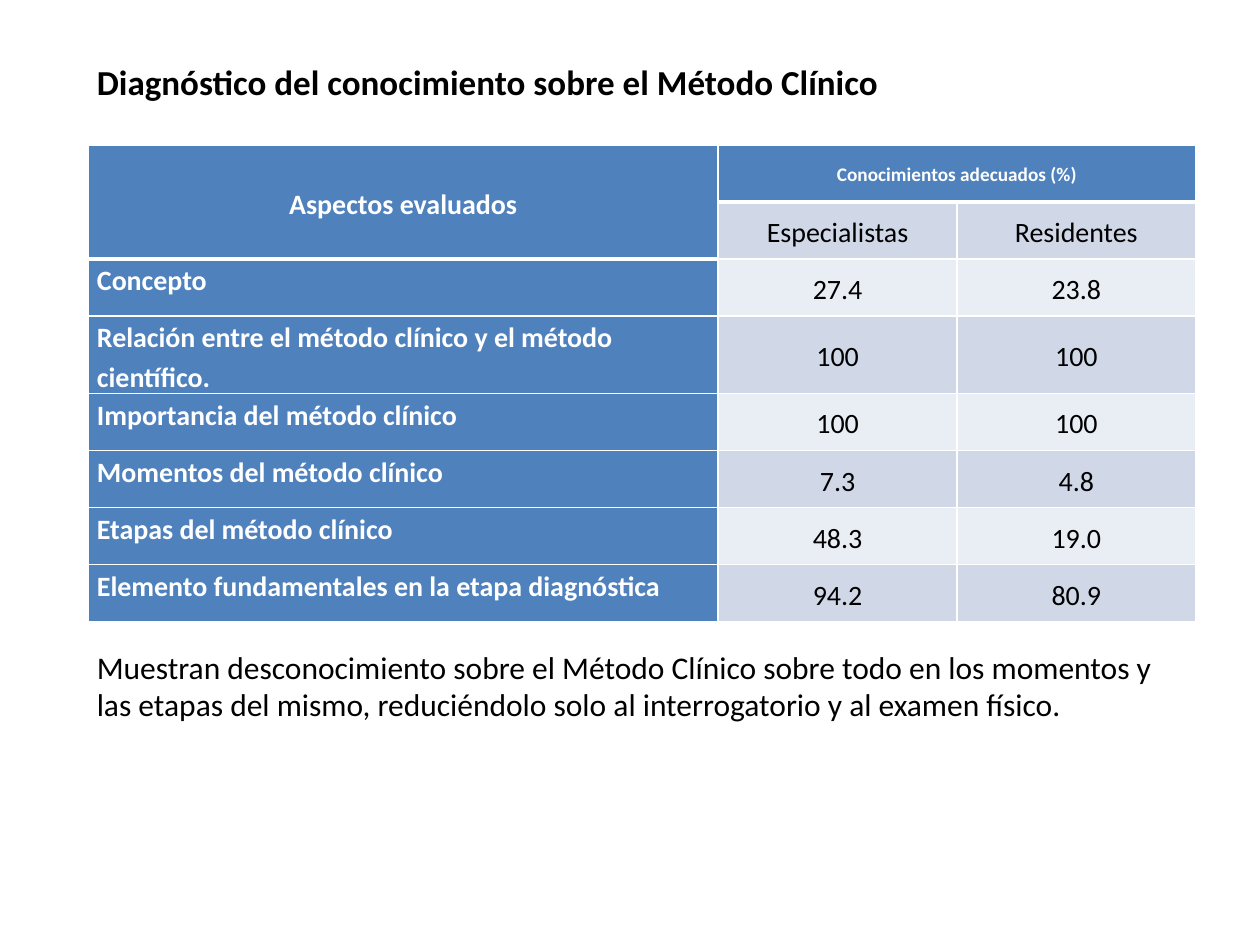
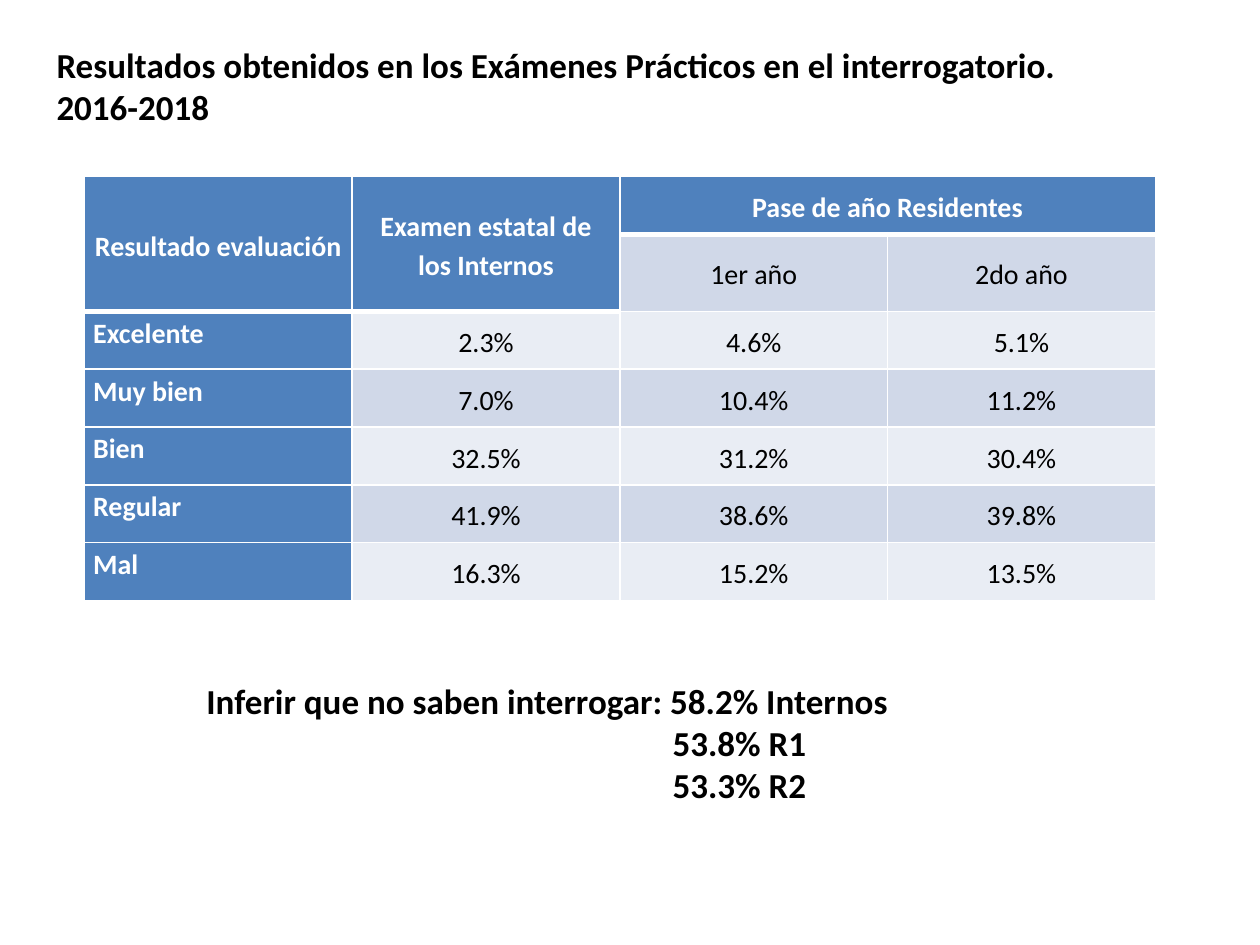
from lxml import etree
from pptx import Presentation
from pptx.dml.color import RGBColor
from pptx.enum.text import MSO_ANCHOR, PP_ALIGN
from pptx.oxml.ns import qn
from pptx.util import Inches, Pt

MIDDLE, TOP = MSO_ANCHOR.MIDDLE, MSO_ANCHOR.TOP
CENTER, LEFT = PP_ALIGN.CENTER, PP_ALIGN.LEFT

FONT = "Calibri"
BLACK, WHITE = "000000", "FFFFFF"
HEADER_BLUE = "4F81BD"
BAND_COLORS = ("E9EDF4", "D0D8E8")
SLIDE_WIDTH, SLIDE_HEIGHT = Inches(10), Inches(7.5)
BLANK_LAYOUT = 6
HEADER_ROWS = 2
THIN, THICK = 1, 3

KNOWLEDGE_ROWS = [
    ["Aspectos evaluados", "Conocimientos adecuados (%)", ""],
    ["", "Especialistas", "Residentes"],
    ["Concepto", "27.4", "23.8"],
    ["Relación entre el método clínico y el método científico.", "100", "100"],
    ["Importancia del método clínico", "100", "100"],
    ["Momentos del método clínico", "7.3", "4.8"],
    ["Etapas del método clínico", "48.3", "19.0"],
    ["Elemento fundamentales en la etapa diagnóstica", "94.2", "80.9"],
]
EXAM_ROWS = [
    ["Resultado evaluación", "Examen estatal de los Internos", "Pase de año Residentes", ""],
    ["", "", "1er año", "2do año"],
    ["Excelente", "2.3%", "4.6%", "5.1%"],
    ["Muy bien", "7.0%", "10.4%", "11.2%"],
    ["Bien", "32.5%", "31.2%", "30.4%"],
    ["Regular", "41.9%", "38.6%", "39.8%"],
    ["Mal", "16.3%", "15.2%", "13.5%"],
]


def grid(steps):
    """Length of a number of grid steps; a hundred steps span the slide's width."""
    return round(SLIDE_WIDTH * steps / 100)


def color(hex_code):
    return RGBColor.from_string(hex_code)


def style_runs(paragraph, size, hex_code, bold):
    for run in paragraph.runs:
        run.font.name = FONT
        run.font.size = Pt(size)
        run.font.bold = bold
        run.font.color.rgb = color(hex_code)


def add_text(slide, box, lines, size=20, bold=True):
    """Add one paragraph per line and return the paragraphs."""
    frame = slide.shapes.add_textbox(*map(grid, box)).text_frame
    frame.word_wrap = True
    frame.text = "\n".join(lines)
    for paragraph in frame.paragraphs:
        style_runs(paragraph, size, BLACK, bold)
    return frame.paragraphs


def set_borders(cell, top, bottom):
    properties = cell._tc.get_or_add_tcPr()
    for side, width in (("L", THIN), ("R", THIN), ("T", top), ("B", bottom)):
        line = etree.SubElement(properties, qn(f"a:ln{side}"), w=str(Pt(width)))
        fill = etree.SubElement(line, qn("a:solidFill"))
        etree.SubElement(fill, qn("a:srgbClr"), val=WHITE)


def format_cell(cell, text, row, column, group_column, group_size):
    def is_header(row):
        return row == 0 or (row < HEADER_ROWS and column < group_column)

    header = is_header(row)
    row_label = row >= HEADER_ROWS and column == 0
    colored = header or row_label
    below_header = row > 0 and is_header(row - 1)
    set_borders(cell, THICK if below_header else THIN, THICK if header else THIN)
    cell.fill.solid()
    cell.fill.fore_color.rgb = color(HEADER_BLUE if colored else BAND_COLORS[row % 2])
    cell.margin_left = cell.margin_right = grid(0.7)
    cell.margin_top = cell.margin_bottom = 0
    cell.vertical_anchor = TOP if row_label else MIDDLE
    if not text:
        return
    cell.text_frame.text = text
    paragraph = cell.text_frame.paragraphs[0]
    paragraph.alignment = LEFT if row_label else CENTER
    paragraph.line_spacing = 1.15
    size = group_size if (row, column) == (0, group_column) else 16
    style_runs(paragraph, size, WHITE if colored else BLACK, colored)


def add_results_table(slide, left, top, widths, row_height, rows, group_column, group_size=16):
    """Add a table whose columns from group_column on share one group heading."""
    table = slide.shapes.add_table(
        len(rows), len(widths), grid(left), grid(top),
        grid(sum(widths)), grid(row_height * len(rows))).table
    for table_column, width in zip(table.columns, widths):
        table_column.width = grid(width)
    for row, texts in enumerate(rows):
        table.rows[row].height = grid(row_height)
        for column, text in enumerate(texts):
            format_cell(table.cell(row, column), text, row, column, group_column, group_size)
    for column in range(group_column):
        table.cell(0, column).merge(table.cell(HEADER_ROWS - 1, column))
    table.cell(0, group_column).merge(table.cell(0, len(widths) - 1))


def build_knowledge_slide(slide):
    add_text(slide, (6.7, 4.3, 79.5, 4.4),
             ["Diagnóstico del conocimiento sobre el Método Clínico"])
    add_results_table(slide, 7, 11.5, [50, 18.95, 18.95], 4.53, KNOWLEDGE_ROWS,
                      group_column=1, group_size=11)
    add_text(slide, (6.7, 50.9, 87.4, 10.1),
             ["Muestran desconocimiento sobre el Método Clínico sobre todo en los momentos y "
              "las etapas del mismo, reduciéndolo solo al interrogatorio y al examen físico."],
             size=18, bold=False)


def build_exam_slide(slide):
    add_text(slide, (3.5, 3, 94.5, 7.7),
             ["Resultados obtenidos en los Exámenes Prácticos en el interrogatorio.", "2016-2018"])
    add_results_table(slide, 6.7, 14, [21.25] * 4, 4.59, EXAM_ROWS, group_column=2)
    conclusion = add_text(slide, (15.4, 53.4, 65.4, 11.1),
                          ["Inferir que no saben interrogar: 58.2% Internos",
                           "53.8% R1", "53.3% R2"])
    for resident_line in conclusion[1:]:
        resident_line._p.get_or_add_pPr().set("marL", str(grid(37)))


def main():
    deck = Presentation()
    deck.slide_width, deck.slide_height = SLIDE_WIDTH, SLIDE_HEIGHT
    for build in (build_knowledge_slide, build_exam_slide):
        build(deck.slides.add_slide(deck.slide_layouts[BLANK_LAYOUT]))
    deck.save("out.pptx")


if __name__ == "__main__":
    main()
